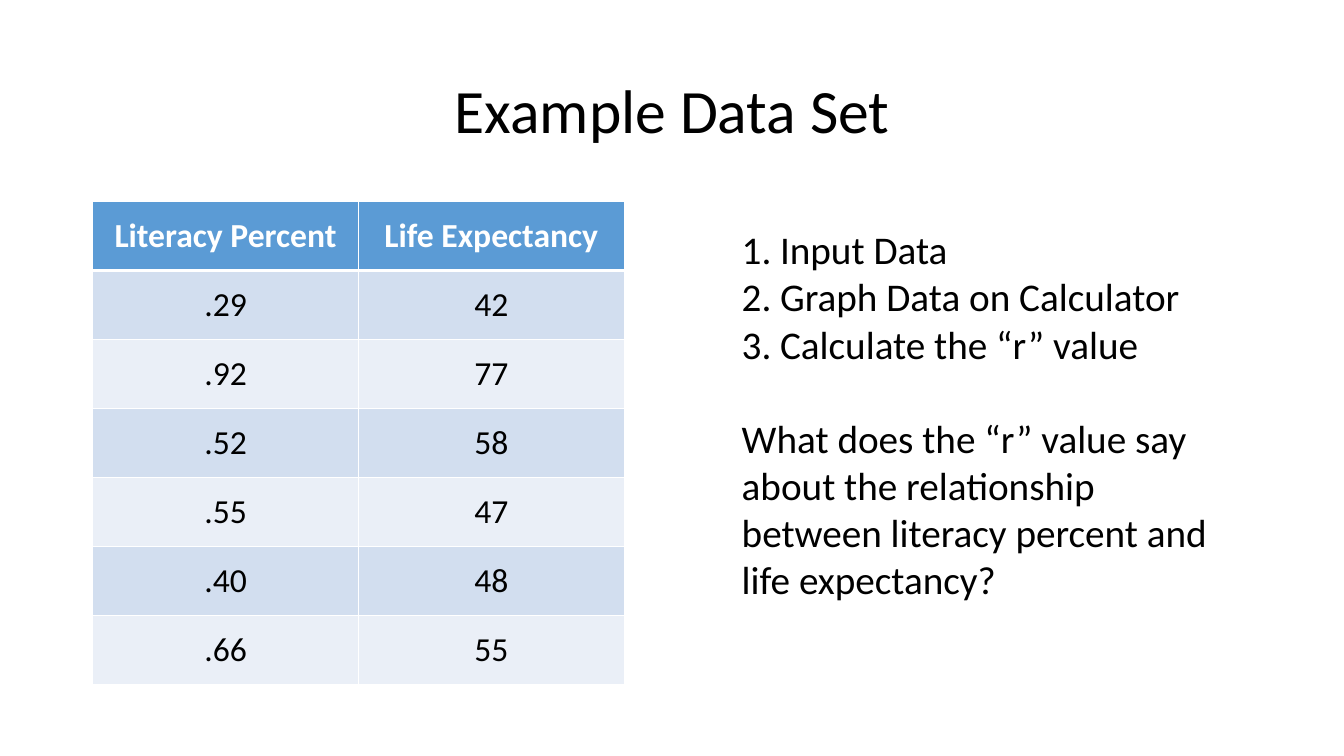
from pptx import Presentation
from pptx.dml.color import RGBColor
from pptx.enum.text import MSO_ANCHOR as Anchor, MSO_AUTO_SIZE as AutoSize, PP_ALIGN as Align
from pptx.oxml.ns import qn
from pptx.util import Inches, Pt
from lxml.etree import SubElement

BLACK, WHITE = "000000", "FFFFFF"
HEADER_FILL = "5B9BD5"
BAND_FILLS = ["D2DEEF", "EAEFF7"]

HEADINGS = ("Literacy Percent", "Life Expectancy")
COUNTRIES = [(".29", "42"), (".92", "77"), (".52", "58"),
             (".55", "47"), (".40", "48"), (".66", "55")]
STEPS = ["Input Data", "Graph Data on Calculator", "Calculate the “r” value"]
QUESTION = ("What does the “r” value say about the relationship "
            "between literacy percent and life expectancy?")


def color(hex_text):
    return RGBColor.from_string(hex_text)


def write(para, text, size=28, fill=BLACK, bold=False, align=None,
          numbered=False, before=0, spacing=None):
    """Put formatted text into a paragraph."""
    span = para.add_run()
    span.text = text
    font = span.font
    font.name, font.size, font.bold = "Calibri", Pt(size), bold
    font.color.rgb = color(fill)
    para.alignment = align
    para.space_before = Pt(before)
    if spacing:
        para.line_spacing = spacing
    if numbered:
        props = para._p.get_or_add_pPr()
        indent = Inches(0.38)
        props.set("marL", str(indent))
        props.set("indent", str(-indent))
        SubElement(props, qn("a:buFont"), typeface="+mj-lt")
        SubElement(props, qn("a:buAutoNum"), type="arabicPeriod")


def border(cell, widths):
    """Draw white borders; widths are left, right, top and bottom in points."""
    props = cell._tc.get_or_add_tcPr()
    for side, width in zip("LRTB", widths):
        line = SubElement(props, qn(f"a:ln{side}"), w=str(Pt(width)))
        SubElement(SubElement(line, qn("a:solidFill")), qn("a:srgbClr"), val=WHITE)


class SlideBuilder:
    """Holds the deck and page; places are percentages of the slide's size."""

    def __init__(self, width, height):
        self.deck = Presentation()
        self.deck.slide_width, self.deck.slide_height = Inches(width), Inches(height)
        self.page = self.deck.slides.add_slide(self.deck.slide_layouts[6])

    def place(self, left, top, width, height):
        across, down = self.deck.slide_width / 100, self.deck.slide_height / 100
        return [round(n) for n in (left * across, top * down, width * across, height * down)]

    def text(self, area, paragraphs, anchor=Anchor.TOP, fit=AutoSize.NONE):
        box = self.page.shapes.add_textbox(*self.place(*area))
        frame = box.text_frame
        frame.word_wrap = True
        frame.auto_size = fit
        frame.vertical_anchor = anchor
        for number, (text, style) in enumerate(paragraphs):
            para = frame.add_paragraph() if number else frame.paragraphs[0]
            write(para, text, **style)

    def table(self, area, rows):
        table = self.page.shapes.add_table(
            len(rows), len(rows[0]), *self.place(*area)).table
        for r, row in enumerate(rows):
            header = r == 0
            for c, text in enumerate(row):
                cell = table.cell(r, c)
                cell.vertical_anchor = Anchor.MIDDLE
                border(cell, (1, 1, 3 if r == 1 else 1, 3 if header else 1))
                cell.fill.solid()
                cell.fill.fore_color.rgb = color(
                    HEADER_FILL if header else BAND_FILLS[(r - 1) % 2])
                write(cell.text_frame.paragraphs[0], text, size=24, bold=header,
                      fill=WHITE if header else BLACK, align=Align.CENTER)


def main():
    slide = SlideBuilder(13.33, 7.5)

    # Title
    slide.text((6.9, 5.33, 86.25, 19.33),
               [("Example Data Set", dict(size=44, align=Align.CENTER, spacing=0.9))],
               anchor=Anchor.MIDDLE)

    # Data table
    slide.table((6.9, 26.67, 39.55, 63.87), [HEADINGS, *COUNTRIES])

    # Steps, then the question one line lower
    steps = [(step, dict(numbered=True)) for step in STEPS]
    slide.text((54.45, 29.2, 38.6, 51.6), [*steps, (QUESTION, dict(before=34))],
               fit=AutoSize.SHAPE_TO_FIT_TEXT)

    slide.deck.save("out.pptx")


if __name__ == "__main__":
    main()
